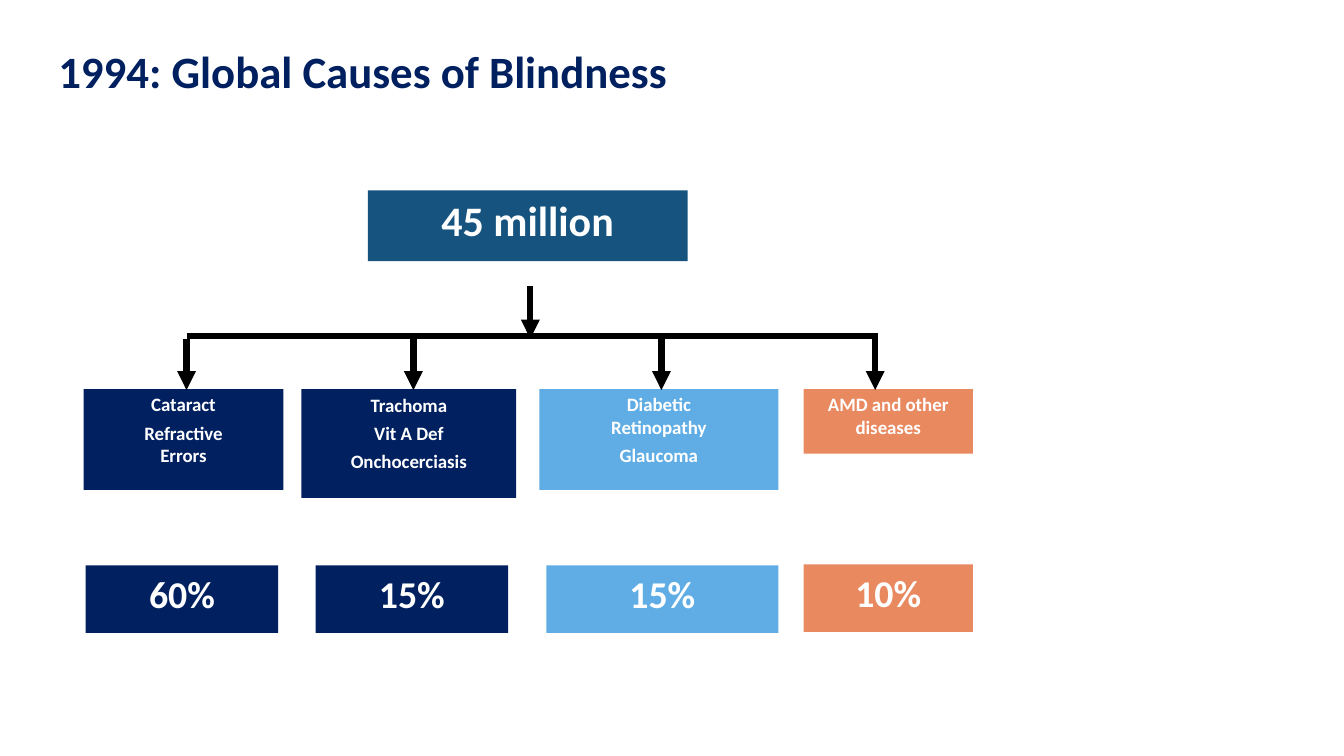
from lxml import etree
from pptx import Presentation
from pptx.dml.color import RGBColor as RGB
from pptx.enum.shapes import MSO_CONNECTOR as LINK, MSO_SHAPE as SHAPE
from pptx.enum.text import MSO_ANCHOR as ANCHOR, PP_ALIGN as ALIGN
from pptx.oxml.ns import qn
from pptx.util import Inches, Pt

COLORS = {
    "navy": "002060",
    "teal": "16537F",
    "sky": "5FADE4",
    "coral": "E98960",
    "white": "FFFFFF",
    "black": "000000",
}


def write(para, text, size, color):
    for i, line in enumerate(text.split("\n")):
        if i:
            para.add_line_break()
        run = para.add_run()
        run.text = line
        run.font.name = "Calibri"
        run.font.size = Pt(size)
        run.font.bold = True
        run.font.color.rgb = RGB.from_string(COLORS[color])


def add_box(x, y, w, h, color, lines, size, side=0.1, top=0.05):
    box = slide.shapes.add_shape(
        SHAPE.RECTANGLE, Inches(x), Inches(y), Inches(w), Inches(h))
    box.shadow.inherit = False
    box.fill.solid()
    box.fill.fore_color.rgb = RGB.from_string(COLORS[color])
    box.line.fill.background()
    frame = box.text_frame
    frame.word_wrap = True
    frame.vertical_anchor = ANCHOR.TOP
    frame.margin_left = frame.margin_right = Inches(side)
    frame.margin_top = frame.margin_bottom = Inches(top)
    for i, line in enumerate(lines):
        para = frame.add_paragraph() if i else frame.paragraphs[0]
        para.alignment = ALIGN.CENTER
        if i:
            para.space_before = Pt(size * 0.05)
        if i < len(lines) - 1:
            para.space_after = Pt(size * 0.25)
        write(para, line, size, "white")


deck = Presentation()
deck.slide_width = Inches(13.33)
deck.slide_height = Inches(7.5)
slide = deck.slides.add_slide(deck.slide_layouts[6])

add_box(3.65, 1.89, 3.17, 0.7, "teal", ["45 million"], 30, 0.07, 0.04)

causes = [
    (0.83, 1.98, 1.0, "navy", ["Cataract", "Refractive\nErrors"]),
    (2.99, 2.13, 1.08, "navy", ["Trachoma", "Vit A Def", "Onchocerciasis"]),
    (5.35, 2.37, 1.0, "sky", ["Diabetic\nRetinopathy", "Glaucoma"]),
    (7.97, 1.68, 0.64, "coral", ["AMD and other\ndiseases"]),
]
for x, w, h, color, lines in causes:
    add_box(x, 3.86, w, h, color, lines, 13.5, 0.07, 0.04)

links = [(5.26, 2.84, 5.26, 3.36, True), (1.85, 3.33, 8.71, 3.33, False)]
links += [(x, 3.36, x, 3.87, True) for x in (1.85, 4.1, 6.56, 8.68)]
for x1, y1, x2, y2, arrow in links:
    link = slide.shapes.add_connector(
        LINK.STRAIGHT, Inches(x1), Inches(y1), Inches(x2), Inches(y2))
    link.line.width = Pt(4.5)
    link.line.color.rgb = RGB.from_string(COLORS["black"])
    if arrow:
        etree.SubElement(link.line._get_or_add_ln(), qn("a:tailEnd"), type="triangle")
    etree.SubElement(link._element.spPr, qn("a:effectLst"))

shares = [
    (0.85, 5.61, 1.91, "navy", "60%"),
    (3.13, 5.61, 1.91, "navy", "15%"),
    (5.42, 5.61, 2.3, "sky", "15%"),
    (7.97, 5.6, 1.68, "coral", "10%"),
]
for x, y, w, color, share in shares:
    add_box(x, y, w, 0.67, color, [share], 27)

title = slide.shapes.add_textbox(
    Inches(0.48), Inches(0.26), Inches(9.92), Inches(0.94)).text_frame
title.word_wrap = True
title.vertical_anchor = ANCHOR.MIDDLE
title.paragraphs[0].line_spacing = 0.9
write(title.paragraphs[0], "1994: Global Causes of Blindness", 32, "navy")

deck.save("out.pptx")
